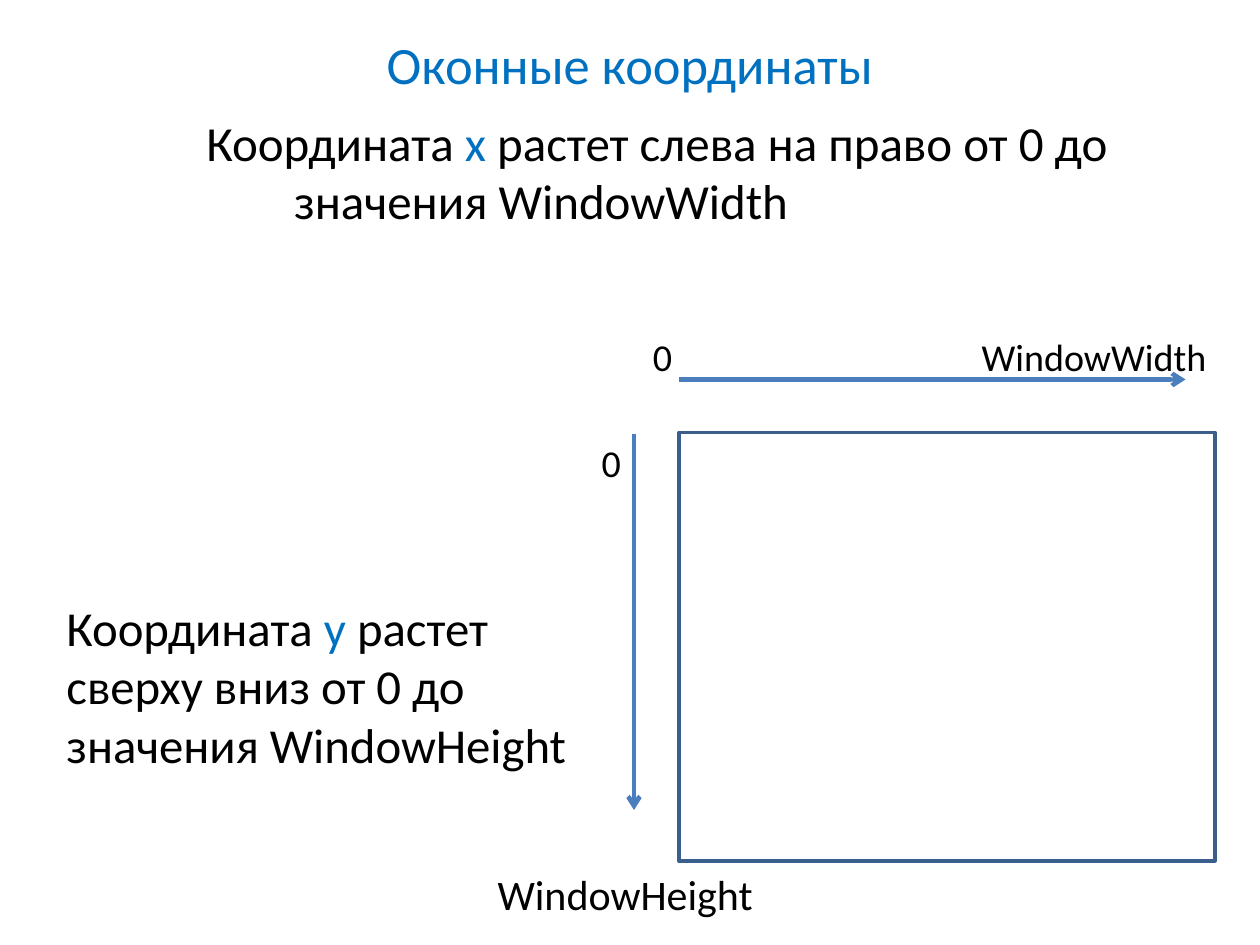
import dataclasses
import typing

import lxml.etree
import pptx
import pptx.dml.color
import pptx.enum.shapes
import pptx.enum.text
import pptx.oxml.ns
import pptx.util

Cm = pptx.util.Cm
Pt = pptx.util.Pt
RGB = pptx.dml.color.RGBColor
Align = pptx.enum.text.PP_ALIGN


@dataclasses.dataclass(frozen=True)
class Theme:
    font: str = "Calibri"
    ink: RGB = RGB(0x00, 0x00, 0x00)
    accent: RGB = RGB(0x00, 0x70, 0xC0)
    frame: RGB = RGB(0x3A, 0x5F, 0x8C)
    arrow: RGB = RGB(0x4B, 0x7E, 0xBC)
    title: float = 30
    top: float = 28
    side: float = 27.9
    end: float = 24
    mark: float = 21.7
    edge: float = 2
    axis: float = 2.5


THEME = Theme()


class Piece(typing.NamedTuple):
    text: str
    color: RGB = THEME.ink


@dataclasses.dataclass(frozen=True)
class Label:
    """A text box; lengths are in centimetres, hang is a hanging indent."""
    left: float
    top: float
    width: float
    height: float
    size: float
    words: tuple[Piece, ...]
    align: Align = Align.LEFT
    hang: float = 0
    inset: float = 0.13


class Axis(typing.NamedTuple):
    x1: float
    y1: float
    x2: float
    y2: float


WINDOW = (13.69, 8.72, 10.8, 8.64)

LABELS = (
    Label(1.27, 0.64, 22.86, 2.16, THEME.title,
          (Piece("Оконные координаты", THEME.accent),), Align.CENTER, inset=0),
    Label(3.91, 2.13, 20.6, 2.64, THEME.top,
          (Piece("Координата "), Piece("x ", THEME.accent),
           Piece("растет слева на право от 0 до значения WindowWidth")),
          hang=1.77),
    Label(1.09, 11.91, 10.8, 3.99, THEME.side,
          (Piece("Координата "), Piece("y", THEME.accent),
           Piece(" растет сверху вниз от 0 до значения WindowHeight"))),
    Label(12.91, 6.6, 1, 1.2, THEME.mark, (Piece("0"),)),
    Label(19.54, 6.6, 5.4, 1.2, THEME.mark, (Piece("WindowWidth"),)),
    Label(11.88, 8.74, 1, 1.2, THEME.mark, (Piece("0"),)),
    Label(9.78, 17.37, 6, 1.27, THEME.end, (Piece("WindowHeight"),)),
)

AXES = (Axis(13.69, 7.65, 23.9, 7.65), Axis(12.78, 8.74, 12.78, 16.33))


def write(slide: typing.Any, label: Label) -> None:
    box = slide.shapes.add_textbox(
        Cm(label.left), Cm(label.top), Cm(label.width), Cm(label.height))
    frame = box.text_frame
    frame.word_wrap = True
    frame.margin_top = frame.margin_bottom = Cm(label.inset)
    para = frame.paragraphs[0]
    para.alignment = label.align
    if label.hang:
        props = para._p.get_or_add_pPr()
        props.set("marL", str(int(Cm(label.hang))))
        props.set("indent", str(-int(Cm(label.hang))))
    for piece in label.words:
        run = para.add_run()
        run.text = piece.text
        run.font.name = THEME.font
        run.font.size = Pt(label.size)
        run.font.color.rgb = piece.color


def frame_window(slide: typing.Any) -> None:
    rect = slide.shapes.add_shape(
        pptx.enum.shapes.MSO_SHAPE.RECTANGLE, *map(Cm, WINDOW))
    rect.shadow.inherit = False
    rect.fill.background()
    rect.line.color.rgb = THEME.frame
    rect.line.width = Pt(THEME.edge)


def draw_axis(slide: typing.Any, axis: Axis) -> None:
    line = slide.shapes.add_connector(
        pptx.enum.shapes.MSO_CONNECTOR.STRAIGHT, *map(Cm, axis))
    line.line.color.rgb = THEME.arrow
    line.line.width = Pt(THEME.axis)
    qn = pptx.oxml.ns.qn
    props = line._element.spPr
    lxml.etree.SubElement(props.find(qn("a:ln")), qn("a:tailEnd"), type="arrow")
    lxml.etree.SubElement(props, qn("a:effectLst"))


def main() -> None:
    deck = pptx.Presentation()
    deck.slide_width, deck.slide_height = Cm(25.4), Cm(19.05)
    slide = deck.slides.add_slide(deck.slide_layouts[6])
    frame_window(slide)
    for axis in AXES:
        draw_axis(slide, axis)
    for label in LABELS:
        write(slide, label)
    deck.save("out.pptx")


if __name__ == "__main__":
    main()
